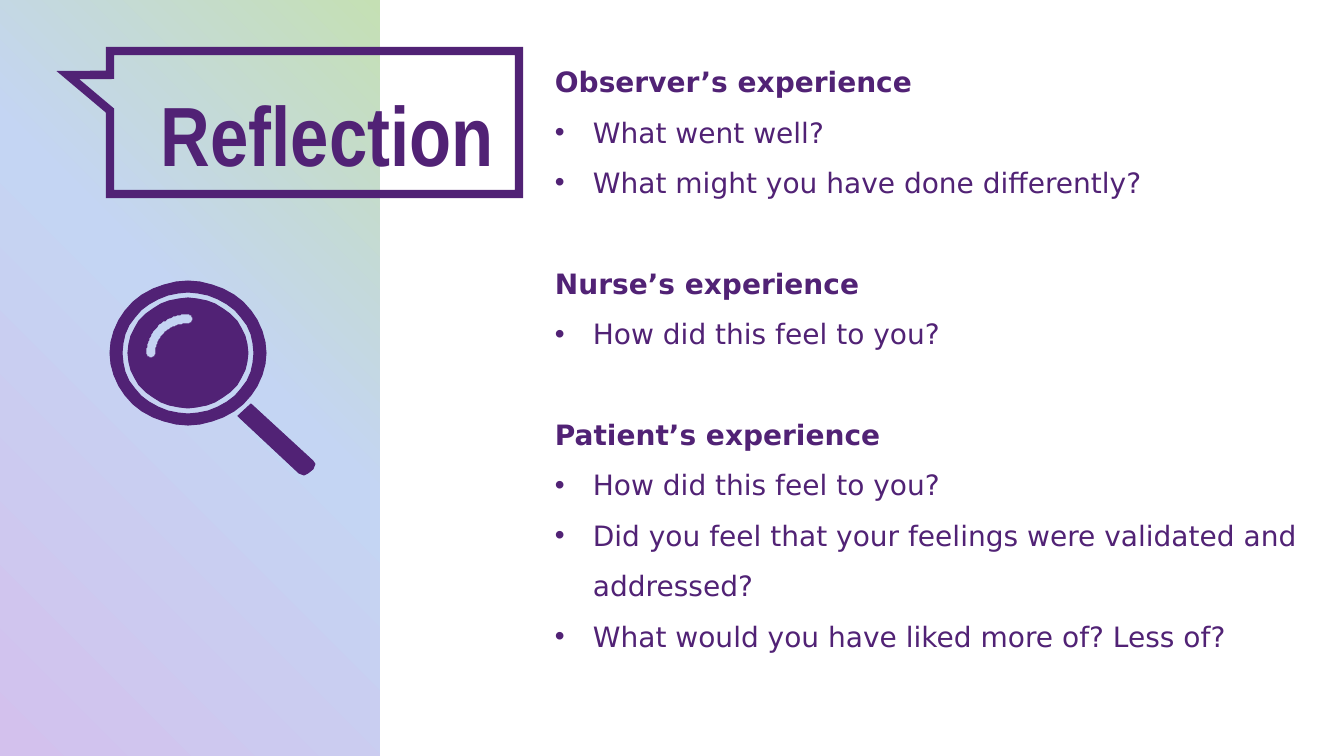
import math

from lxml import etree
from pptx import Presentation
from pptx import util as u
from pptx.dml import color
from pptx.enum import shapes, text
from pptx.oxml import ns

PX = 914400 / 100.8
PURPLE = "512275"


def rgb(value):
    return color.RGBColor.from_string(value)


def arc(radius_x, radius_y, start=0, end=360, center=(188, 353)):
    """Points along an ellipse, clockwise from the right, in px."""
    steps = 40
    angles = [math.radians(start + (end - start) * i / steps) for i in range(steps + 1)]
    return [(center[0] + radius_x * math.cos(a), center[1] + radius_y * math.sin(a))
            for a in angles]


presentation = Presentation()
presentation.slide_width = u.Emu(round(1344 * PX))
presentation.slide_height = u.Emu(round(756 * PX))
slide = presentation.slides.add_slide(presentation.slide_layouts[6])

# Side panel and title callout
frames = []
for kind, box in [(shapes.MSO_SHAPE.RECTANGLE, (0, 0, 380, 756)),
                  (shapes.MSO_SHAPE.RECTANGULAR_CALLOUT, (110, 51, 409, 143))]:
    shape = slide.shapes.add_shape(kind, *[round(v * PX) for v in box])
    shape.shadow.inherit = False
    shape.fill.background()
    frames.append(shape)
panel, callout = frames
panel.line.fill.background()
callout.adjustments[0] = -0.603
callout.adjustments[1] = -0.331
callout.line.color.rgb = rgb(PURPLE)
callout.line.width = u.Pt(6)
etree.SubElement(callout.line._ln, ns.qn("a:miter"), lim="800000")

# Panel gradient, spreading from the bottom left corner
gradient = etree.Element(ns.qn("a:gradFill"), rotWithShape="1")
stops = etree.SubElement(gradient, ns.qn("a:gsLst"))
for position, tint in [(0, "D3C1ED"), (56, "C4D5F3"), (100, "C5E0B4")]:
    stop = etree.SubElement(stops, ns.qn("a:gs"), pos=str(position * 1000))
    etree.SubElement(stop, ns.qn("a:srgbClr"), val=tint)
spread = etree.SubElement(gradient, ns.qn("a:path"), path="circle")
etree.SubElement(spread, ns.qn("a:fillToRect"), t="100000", r="100000")
etree.SubElement(gradient, ns.qn("a:tileRect"), l="-100000", b="-100000")
properties = panel._element.spPr
properties.replace(properties.find(ns.qn("a:noFill")), gradient)

# Magnifying glass: each part is a list of outlines, the second one a hole
glare = (arc(42, 39, 180, 270) + arc(5, 5, -90, 90, (188, 319))
         + arc(32, 29, 270, 180) + arc(5, 5, 0, 180, (151, 353)))
handle = [(251, 404), (238, 416), (299, 473), (304, 475), (308, 473),
          (313, 469), (315, 464), (313, 461)]
for outlines in [[arc(78, 72), arc(66, 61)], [arc(60, 55), glare], [handle]]:
    builder = slide.shapes.build_freeform(*outlines[0][0], scale=PX)
    builder.add_line_segments(outlines[0][1:], close=True)
    for hole in outlines[1:]:
        builder.move_to(*hole[0])
        builder.add_line_segments(hole[1:], close=True)
    shape = builder.convert_to_shape()
    shape.shadow.inherit = False
    shape.fill.solid()
    shape.fill.fore_color.rgb = rgb(PURPLE)
    shape.line.color.rgb = rgb(PURPLE)
    shape.line.width = u.Pt(0.75)

# Text: (words, size, font, bold, line spacing, space before, indent, bulleted)
title = [("Reflection", 60, "Arial Narrow", True, 1.2, 0, 19, False)]
sections = [
    ("Observer’s experience", ["What went well?", "What might you have done differently?"]),
    ("Nurse’s experience", ["How did this feel to you?"]),
    ("Patient’s experience", ["How did this feel to you?",
                              "Did you feel that your feelings were validated and addressed?",
                              "What would you have liked more of? Less of?"]),
]
questions = []
for heading, items in sections:
    gap = 36 if questions else 0
    questions.append((heading, 20, "DejaVu Sans", True, 1.5, gap, 0, False))
    questions += [(item, 20, "DejaVu Sans", False, 1.5, 0, 38, True) for item in items]

for box, rows in [((132, 57, 387, 132), title), ((545, 43, 798, 621), questions)]:
    frame = slide.shapes.add_textbox(*[round(v * PX) for v in box]).text_frame
    frame.word_wrap = True
    frame.auto_size = text.MSO_AUTO_SIZE.SHAPE_TO_FIT_TEXT
    for number, (words, size, font, bold, spacing, gap, indent, bulleted) in enumerate(rows):
        paragraph = frame.add_paragraph() if number else frame.paragraphs[0]
        paragraph.text = words
        paragraph.line_spacing = spacing
        paragraph.space_before = u.Pt(gap)
        run = paragraph.runs[0]
        run.font.name = font
        run.font.size = u.Pt(size)
        run.font.bold = bold
        run.font.color.rgb = rgb(PURPLE)
        settings = paragraph._p.get_or_add_pPr()
        settings.set("marL", str(round(indent * PX)))
        if bulleted:
            settings.set("indent", str(round(-indent * PX)))
            etree.SubElement(settings, ns.qn("a:buFont"), typeface="Arial")
            etree.SubElement(settings, ns.qn("a:buChar"), char="•")

presentation.save("out.pptx")
